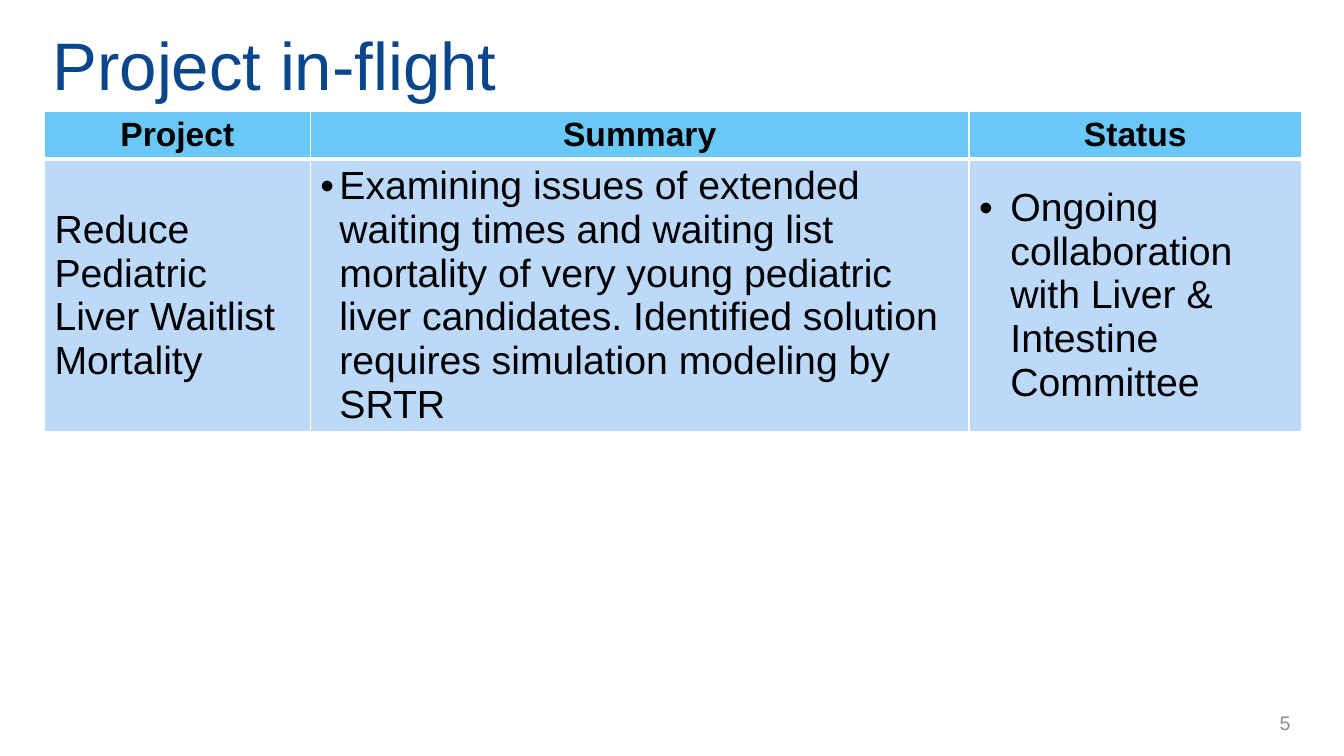
from dataclasses import dataclass

from lxml.etree import SubElement
from pptx import Presentation
from pptx.dml.color import RGBColor
from pptx.enum.text import MSO_ANCHOR as Anchor, PP_ALIGN as Align
from pptx.oxml.ns import qn
from pptx.util import Cm, Pt


@dataclass(frozen=True)
class Theme:
    font: str = "Arial"
    title: str = "0A468C"
    text: str = "000000"
    number: str = "8C8C8C"
    header_fill: str = "69C8F5"
    body_fill: str = "BCD9FA"
    border: str = "FFFFFF"
    title_size: int = 48
    header_size: int = 24
    body_size: int = 28
    number_size: int = 14
    border_width: int = 1
    header_rule: int = 3


class Deck:
    def __init__(self, theme):
        self.theme = theme
        self.prs = Presentation()
        self.prs.slide_width, self.prs.slide_height = Cm(33.87), Cm(19.05)
        self.s = self.prs.slides.add_slide(self.prs.slide_layouts[5])

    def set_text(self, tf, text, size, color, align=Align.LEFT, bold=False, indent=0):
        """Fill a text frame with one paragraph; an indent in cm adds a bullet."""
        tf.word_wrap = True
        p = tf.paragraphs[0]
        p.alignment = align
        if indent:
            pPr = p._p.get_or_add_pPr()
            pPr.set("marL", str(Cm(indent)))
            pPr.set("indent", str(-Cm(indent)))
            SubElement(pPr, qn("a:buFont"), typeface=self.theme.font)
            SubElement(pPr, qn("a:buChar"), char="•")
        r = p.add_run()
        r.text = text
        for name, value in {"name": self.theme.font, "size": Pt(size), "bold": bold}.items():
            setattr(r.font, name, value)
        r.font.color.rgb = RGBColor.from_string(color)

    def place(self, sp, left, top, width, height):
        box = {"left": left, "top": top, "width": width, "height": height}
        for name, value in box.items():
            setattr(sp, name, Cm(value))

    def title(self, text, *box):
        sp = self.s.shapes.title
        self.place(sp, *box)
        sp.text_frame.vertical_anchor = Anchor.MIDDLE
        self.set_text(sp.text_frame, text, self.theme.title_size, self.theme.title)

    def page_number(self, text, *box):
        sp = self.s.shapes.add_textbox(*map(Cm, box))
        sp.text_frame.vertical_anchor = Anchor.MIDDLE
        self.set_text(sp.text_frame, text, self.theme.number_size, self.theme.number,
                      Align.RIGHT)

    def borders(self, cell, widths):
        tcPr = cell._tc.get_or_add_tcPr()
        for side, width in widths.items():
            ln = SubElement(tcPr, qn(f"a:ln{side}"), w=str(Pt(width)))
            fill = SubElement(ln, qn("a:solidFill"))
            SubElement(fill, qn("a:srgbClr"), val=self.theme.border)

    def table(self, left, top, widths, heights, header, body, indents):
        """Draw a header row above one body row; indents are per body cell."""
        t = self.theme
        frame = self.s.shapes.add_table(
            2, len(widths), Cm(left), Cm(top), Cm(sum(widths)), Cm(sum(heights)))
        grid = frame.table
        for row, height in zip(grid.rows, heights):
            row.height = Cm(height)
        styles = [
            (header, t.header_fill, "B",
             [{"size": t.header_size, "align": Align.CENTER, "bold": True}] * len(widths)),
            (body, t.body_fill, "T",
             [{"size": t.body_size, "indent": indent} for indent in indents]),
        ]
        for col, width in enumerate(widths):
            grid.columns[col].width = Cm(width)
            for row, (texts, fill, ruled_side, formats) in enumerate(styles):
                cell = grid.cell(row, col)
                sides = dict.fromkeys("LRTB", t.border_width)
                self.borders(cell, sides | {ruled_side: t.header_rule})
                cell.fill.solid()
                cell.fill.fore_color.rgb = RGBColor.from_string(fill)
                cell.vertical_anchor = Anchor.MIDDLE
                self.set_text(cell.text_frame, texts[col], color=t.text, **formats[col])


def main():
    deck = Deck(Theme())
    deck.title("Project in-flight", 1.07, 0.43, 32.39, 2.36)
    deck.table(
        1.12, 2.8, widths=[6.7, 16.6, 8.38], heights=[1.2, 6.88],
        header=["Project", "Summary", "Status"],
        body=[
            "Reduce Pediatric Liver Waitlist Mortality",
            "Examining issues of extended waiting times and waiting list mortality of very "
            "young pediatric liver candidates. Identified solution requires simulation "
            "modeling by SRTR",
            "Ongoing collaboration with Liver & Intestine Committee",
        ],
        indents=[0, 0.48, 0.79])
    deck.page_number("5", 27.03, 17.7, 5.74, 1.02)
    deck.prs.save("out.pptx")


if __name__ == "__main__":
    main()
